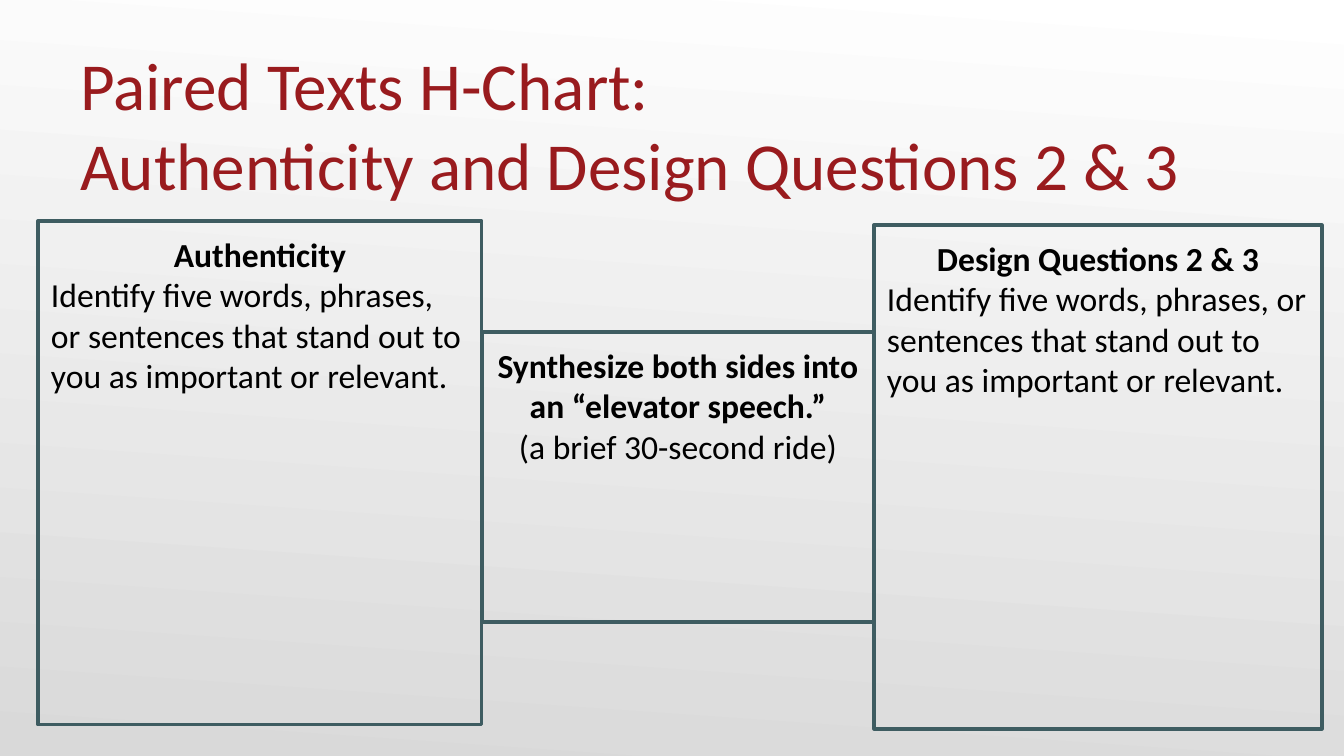
from dataclasses import dataclass

from pptx import Presentation
from pptx import util as u
from pptx.dml.color import RGBColor
from pptx.enum import shapes, text

PX = 914400 / 100.8


@dataclass(frozen=True)
class Theme:
    font: str = "Calibri"
    title_size: int = 48
    body_size: int = 24
    title: str = "991B1E"
    ink: str = "000000"
    border: str = "3E5C61"
    border_width: float = 2.25
    backdrop: tuple = ("FFFFFF", "D9D9D9")
    backdrop_angle: int = 266
    inset: int = 13


THEME = Theme()


def px(length):
    return u.Emu(round(length * PX))


def color(code):
    return RGBColor.from_string(code)


def prepare_frame(frame):
    frame.word_wrap = True
    frame.auto_size = text.MSO_AUTO_SIZE.NONE
    frame.vertical_anchor = text.MSO_ANCHOR.TOP
    frame.margin_left = frame.margin_right = px(THEME.inset)
    frame.margin_top = frame.margin_bottom = px(THEME.inset)


def write_paragraph(para, words, size, code, align, bold=False):
    para.text = words
    para.alignment = align
    para.line_spacing = 1.0
    para.space_before = u.Pt(0)
    para.font.name = THEME.font
    para.font.size = u.Pt(size)
    para.font.bold = bold
    para.font.color.rgb = color(code)


def paint_backdrop(page):
    fill = page.background.fill
    fill.gradient()
    fill.gradient_angle = THEME.backdrop_angle
    for stop, code in zip(fill.gradient_stops, THEME.backdrop):
        stop.color.rgb = color(code)


def place_title(page, words, left, top, width, height):
    title = page.shapes.title
    title.left, title.top = px(left), px(top)
    title.width, title.height = px(width), px(height)
    prepare_frame(title.text_frame)
    write_paragraph(title.text_frame.paragraphs[0], words, THEME.title_size,
                    THEME.title, text.PP_ALIGN.LEFT)


def add_panel(page, heading, detail, detail_align, left, top, width, height):
    """Outlined box with a bold centred heading above its instructions."""
    panel = page.shapes.add_shape(shapes.MSO_SHAPE.RECTANGLE, px(left), px(top),
                                  px(width), px(height))
    panel.shadow.inherit = False
    panel.fill.background()
    panel.line.color.rgb = color(THEME.border)
    panel.line.width = u.Pt(THEME.border_width)
    frame = panel.text_frame
    prepare_frame(frame)
    write_paragraph(frame.paragraphs[0], heading, THEME.body_size, THEME.ink,
                    text.PP_ALIGN.CENTER, bold=True)
    write_paragraph(frame.add_paragraph(), detail, THEME.body_size, THEME.ink,
                    detail_align)


def add_h_chart(page, left, top, width, height):
    """Two tall side panels joined by a shorter crossbar panel."""
    left_width, right_width, right_drop = 444, 448, 4
    bar_drop, bar_height = 111, 290
    side_height = height - right_drop
    bar_left = left + left_width
    right_left = left + width - right_width
    task = ("Identify five words, phrases, or sentences that stand out to you "
            "as important or relevant.")

    add_panel(page, "Authenticity", task, text.PP_ALIGN.LEFT,
              left, top, left_width, side_height)
    add_panel(page, "Design Questions 2 & 3", task, text.PP_ALIGN.LEFT,
              right_left, top + right_drop, right_width, side_height)
    add_panel(page, "Synthesize both sides into an “elevator speech.”",
              "(a brief 30-second ride)", text.PP_ALIGN.CENTER,
              bar_left, top + bar_drop, right_left - bar_left, bar_height)


def main():
    deck = Presentation()
    deck.slide_width, deck.slide_height = px(1344), px(756)
    page = deck.slides.add_slide(deck.slide_layouts[5])
    paint_backdrop(page)
    place_title(page, "Paired Texts H-Chart:\vAuthenticity and Design Questions 2 & 3",
                67, 30, 1210, 126)
    add_h_chart(page, 38, 221, 1284, 508)
    deck.save("out.pptx")


if __name__ == "__main__":
    main()
